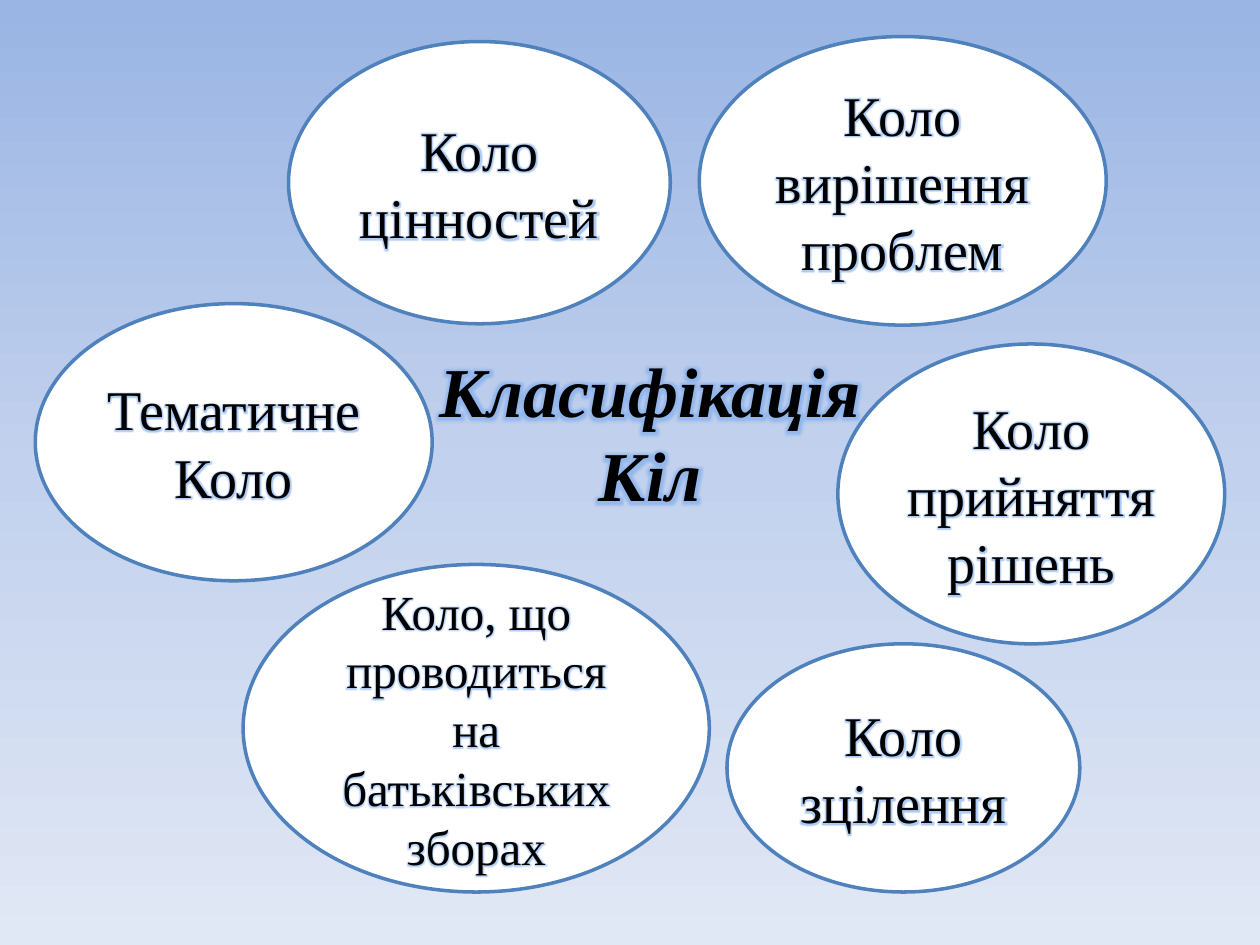
import copy
from dataclasses import dataclass

import pptx
import pptx.dml.color
import pptx.enum.shapes
import pptx.enum.text
import pptx.oxml
import pptx.oxml.ns
import pptx.util

Inches = pptx.util.Inches
Pt = pptx.util.Pt

COLORS = {
    "top": "9AB5E4",
    "middle": "C2D1ED",
    "bottom": "E1E8F5",
    "fill": "FFFFFF",
    "outline": "4F81BD",
    "text": "000000",
    "glow": "76A8EC",
}
FONT = "Times New Roman"


@dataclass
class Circle:
    text: str
    left: float
    top: float
    width: float
    height: float
    size: int = 32


CIRCLES = [
    Circle("Коло цінностей", 2.29, 0.33, 3.03, 2.24),
    Circle("Тематичне Коло", 0.28, 2.41, 3.15, 2.2),
    Circle("Коло, що проводиться на батьківських зборах", 1.93, 4.48, 3.7, 2.6, 28),
    Circle("Коло прийняття рішень", 6.65, 2.73, 3.07, 2.38),
    Circle("Коло вирішення проблем", 5.55, 0.29, 3.23, 2.29),
    Circle("Коло зцілення", 5.77, 5.11, 2.8, 1.97),
]


def rgb(name: str) -> pptx.dml.color.RGBColor:
    return pptx.dml.color.RGBColor.from_string(COLORS[name])


def set_background(s) -> None:
    fill = s.background.fill
    fill.gradient()
    fill.gradient_angle = 270
    stops = fill.gradient_stops
    first = stops[0]._gs
    first.addnext(copy.deepcopy(first))
    names = ["top", "middle", "bottom"]
    for i, (stop, name) in enumerate(zip(fill.gradient_stops, names)):
        stop.color.rgb = rgb(name)
        stop.position = i / 2


def add_glow(r, radius: float) -> None:
    effects = pptx.oxml.parse_xml(
        f'<a:effectLst {pptx.oxml.ns.nsdecls("a")}><a:glow rad="{Pt(radius)}">'
        f'<a:srgbClr val="{COLORS["glow"]}"><a:alpha val="60000"/></a:srgbClr>'
        "</a:glow></a:effectLst>"
    )
    r.font._element.find(pptx.oxml.ns.qn("a:solidFill")).addnext(effects)


def add_text(tf, text: str, size: int, glow: float, bold_italic: bool = False) -> None:
    tf.word_wrap = True
    p = tf.paragraphs[0]
    p.alignment = pptx.enum.text.PP_ALIGN.CENTER
    r = p.add_run()
    r.text = text
    r.font.name = FONT
    r.font.size = Pt(size)
    r.font.color.rgb = rgb("text")
    if bold_italic:
        r.font.bold = r.font.italic = True
    add_glow(r, glow)


def add_circle(s, circle: Circle) -> None:
    sp = s.shapes.add_shape(
        pptx.enum.shapes.MSO_SHAPE.OVAL,
        Inches(circle.left), Inches(circle.top),
        Inches(circle.width), Inches(circle.height),
    )
    sp.shadow.inherit = False
    sp.fill.solid()
    sp.fill.fore_color.rgb = rgb("fill")
    sp.line.color.rgb = rgb("outline")
    sp.line.width = Pt(2)
    sp.text_frame.vertical_anchor = pptx.enum.text.MSO_ANCHOR.MIDDLE
    add_text(sp.text_frame, circle.text, circle.size, glow=3)


def add_title(s) -> None:
    sp = s.shapes.add_textbox(Inches(3.35), Inches(2.71), Inches(3.62), Inches(1.45))
    add_text(sp.text_frame, "Класифікація Кіл", 40, glow=8, bold_italic=True)
    sp.text_frame.auto_size = pptx.enum.text.MSO_AUTO_SIZE.SHAPE_TO_FIT_TEXT


def main() -> None:
    prs = pptx.Presentation()
    prs.slide_width = Inches(10)
    prs.slide_height = Inches(7.5)
    s = prs.slides.add_slide(prs.slide_layouts[6])
    set_background(s)
    for circle in CIRCLES:
        add_circle(s, circle)
    add_title(s)
    prs.save("out.pptx")


if __name__ == "__main__":
    main()
